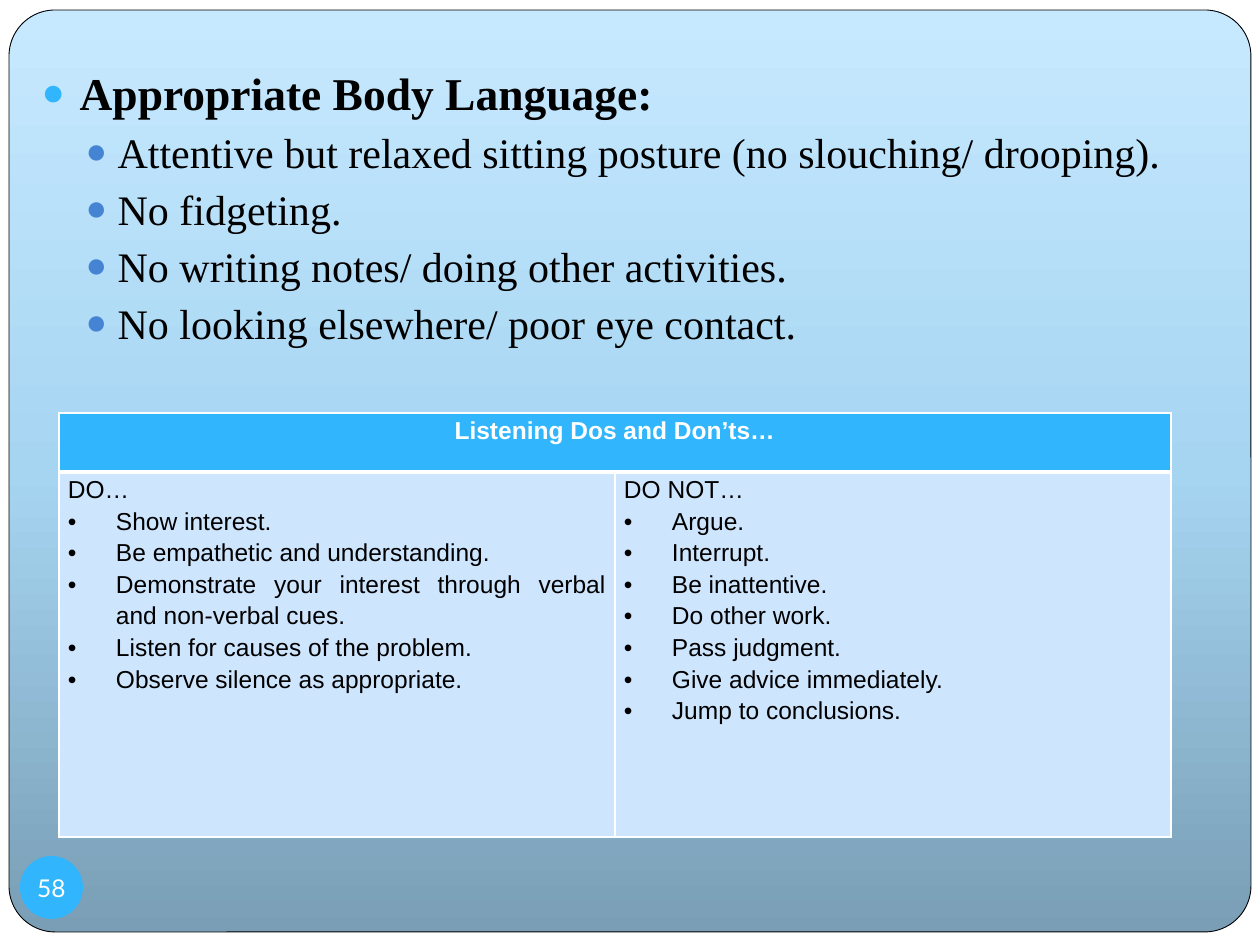
from lxml.etree import SubElement
from pptx import Presentation
from pptx.dml.color import RGBColor
from pptx.enum.shapes import MSO_SHAPE
from pptx.enum.text import MSO_ANCHOR, MSO_AUTO_SIZE, PP_ALIGN
from pptx.oxml import parse_xml
from pptx.oxml.ns import nsdecls, qn
from pptx.util import Pt

EMU_PER_PX = 914400 / 126

COLORS = {
    "white": "FFFFFF",
    "black": "000000",
    "deep": "799EB5",
    "mid": "A6D5F2",
    "pale": "C7E9FF",
    "accent": "31B6FD",
    "sub_bullet": "4584D3",
    "cell": "CEE5FE",
}

HEADING = "Appropriate Body Language:"
POINTS = [
    "Attentive but relaxed sitting posture (no slouching/ drooping).",
    "No fidgeting.",
    "No writing notes/ doing other activities.",
    "No looking elsewhere/ poor eye contact.",
]
TABLE_TITLE = "Listening Dos and Don’ts…"
COLUMNS = [
    ("DO…", [
        "Show interest.",
        "Be empathetic and understanding.",
        "Demonstrate your interest through verbal and non-verbal cues.",
        "Listen for causes of the problem.",
        "Observe silence as appropriate.",
    ]),
    ("DO NOT…", [
        "Argue.",
        "Interrupt.",
        "Be inattentive.",
        "Do other work.",
        "Pass judgment.",
        "Give advice immediately.",
        "Jump to conclusions.",
    ]),
]


def px(n):
    return round(n * EMU_PER_PX)


def rgb(name):
    return RGBColor.from_string(COLORS[name])


def add_run(p, text, size, font, color="black", bold=False):
    r = p.add_run()
    r.text = text
    r.font.size = Pt(size)
    r.font.name = font
    r.font.bold = bold
    r.font.color.rgb = rgb(color)


def next_paragraph(tf):
    p = tf.paragraphs[0]
    return tf.add_paragraph() if p.runs else p


def set_indent(p, left, hanging):
    pPr = p._p.get_or_add_pPr()
    pPr.set("marL", str(px(left)))
    pPr.set("indent", str(-px(hanging)))
    return pPr


def set_bullet(p, char, left, hanging, color=None, percent=100):
    pPr = set_indent(p, left, hanging)
    if color:
        SubElement(SubElement(pPr, qn("a:buClr")), qn("a:srgbClr"), val=COLORS[color])
    SubElement(pPr, qn("a:buSzPct"), val=str(percent * 1000))
    SubElement(pPr, qn("a:buFont"), typeface="Arial")
    SubElement(pPr, qn("a:buChar"), char=char)


def add_shape(s, kind, x, y, w, h, fill):
    sp = s.shapes.add_shape(kind, px(x), px(y), px(w), px(h))
    sp.shadow.inherit = False
    sp.fill.solid()
    sp.fill.fore_color.rgb = rgb(fill)
    sp.line.fill.background()
    return sp


def set_gradient(sp):
    stops = zip((0, 50, 100), ("deep", "mid", "pale"))
    gs = "".join(
        f'<a:gs pos="{pos * 1000}"><a:srgbClr val="{COLORS[c]}"/></a:gs>'
        for pos, c in stops
    )
    grad = parse_xml(
        f'<a:gradFill {nsdecls("a")} rotWithShape="1"><a:gsLst>{gs}</a:gsLst>'
        '<a:lin ang="16200000" scaled="0"/></a:gradFill>'
    )
    spPr = sp.element.spPr
    spPr.replace(spPr.find(qn("a:solidFill")), grad)


def add_frame(s):
    add_shape(s, MSO_SHAPE.RECTANGLE, 0, 0, 1260, 945, "white")
    panel = add_shape(s, MSO_SHAPE.ROUNDED_RECTANGLE, 9, 10, 1242, 922, "pale")
    panel.adjustments[0] = 0.05
    panel.line.color.rgb = rgb("black")
    panel.line.width = Pt(0.5)
    set_gradient(panel)


def fill_body(body):
    body.left, body.top, body.width, body.height = px(29), px(59), px(1201), px(847)
    body.element.getparent().append(body.element)
    tf = body.text_frame
    tf.auto_size = MSO_AUTO_SIZE.NONE
    p = next_paragraph(tf)
    p.space_before = Pt(5.8)
    set_bullet(p, "●", 38, 38, "accent", 85)
    add_run(p, HEADING, 26, "Times New Roman", bold=True)
    for text in POINTS:
        p = next_paragraph(tf)
        p.level = 1
        p.space_before = Pt(3.7)
        set_bullet(p, "●", 76, 32, "sub_bullet", 85)
        add_run(p, text, 24, "Times New Roman")


def set_borders(cell, widths):
    tcPr = cell._tc.get_or_add_tcPr()
    for i, (side, width) in enumerate(zip("LRTB", widths)):
        tcPr.insert(i, parse_xml(
            f'<a:ln{side} {nsdecls("a")} w="{Pt(width)}"><a:solidFill>'
            f'<a:srgbClr val="{COLORS["white"]}"/></a:solidFill></a:ln{side}>'
        ))


def format_cell(cell, fill, widths):
    cell.margin_left = cell.margin_right = px(9)
    cell.margin_top = cell.margin_bottom = 0
    cell.fill.solid()
    cell.fill.fore_color.rgb = rgb(fill)
    set_borders(cell, widths)


def add_cell_line(cell, text, align, color="black", bold=False):
    p = next_paragraph(cell.text_frame)
    p.alignment = align
    p.line_spacing = 1.15
    add_run(p, text, 14, "Arial", color, bold)
    return p


def add_advice_table(s):
    table = s.shapes.add_table(2, 2, px(59), px(413), px(1112), px(424)).table
    for row, height in zip(table.rows, (59, 365)):
        row.height = px(height)
    for cell in table.rows[0].cells:
        format_cell(cell, "accent", (1, 1, 1, 3))
    title = table.cell(0, 0)
    title.merge(table.cell(0, 1))
    p = add_cell_line(title, TABLE_TITLE, PP_ALIGN.CENTER, "white", True)
    set_indent(p, 48, 48)
    for cell, (heading, items) in zip(table.rows[1].cells, COLUMNS):
        format_cell(cell, "cell", (1, 1, 3, 1))
        add_cell_line(cell, heading, PP_ALIGN.JUSTIFY)
        for item in items:
            set_bullet(add_cell_line(cell, item, PP_ALIGN.JUSTIFY), "•", 48, 48)


def add_page_badge(s):
    badge = add_shape(s, MSO_SHAPE.OVAL, 20, 856, 63, 63, "accent")
    tf = badge.text_frame
    tf.margin_left = tf.margin_right = tf.margin_top = tf.margin_bottom = 0
    tf.word_wrap = False
    tf.vertical_anchor = MSO_ANCHOR.MIDDLE
    p = tf.paragraphs[0]
    p.alignment = PP_ALIGN.CENTER
    add_run(p, "58", 14, "Lato", "white")


def main():
    prs = Presentation()
    prs.slide_width, prs.slide_height = px(1260), px(945)
    s = prs.slides.add_slide(prs.slide_layouts[1])
    title, body = s.placeholders
    title.element.getparent().remove(title.element)
    add_frame(s)
    fill_body(body)
    add_advice_table(s)
    add_page_badge(s)
    prs.save("out.pptx")


if __name__ == "__main__":
    main()
